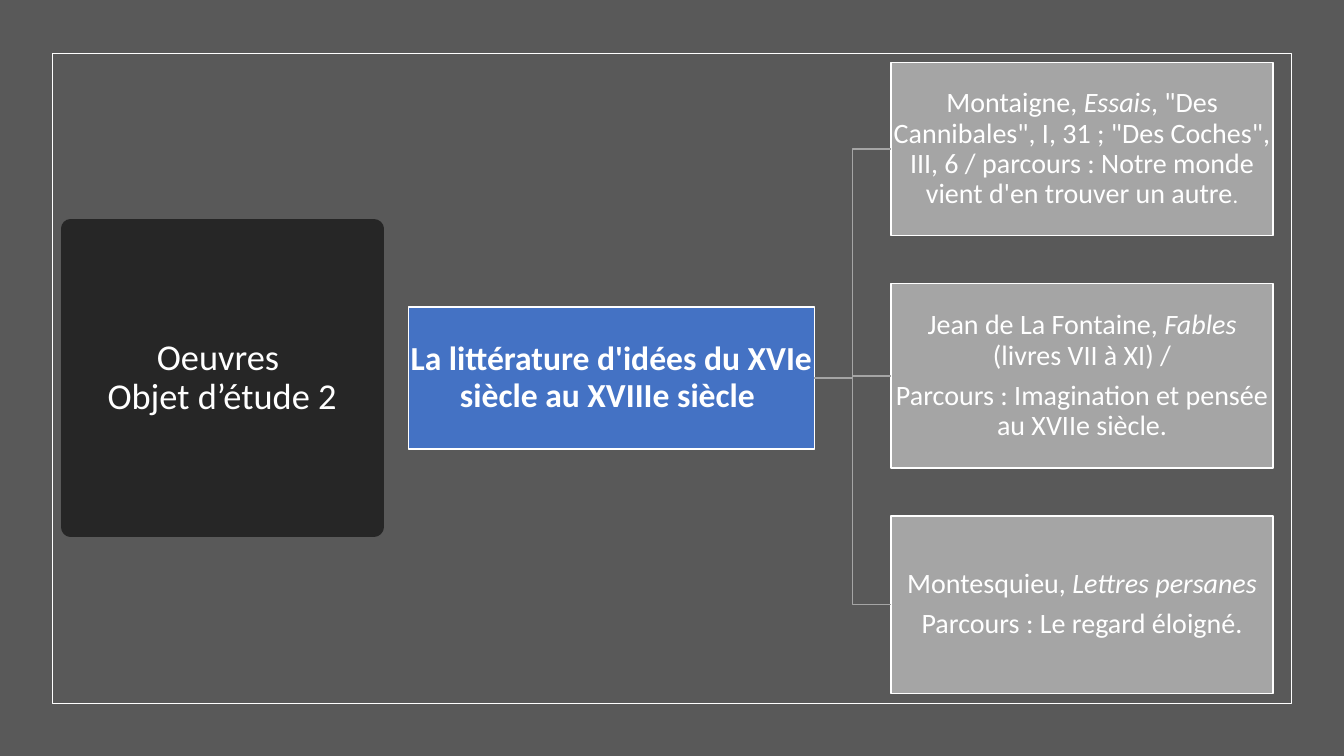
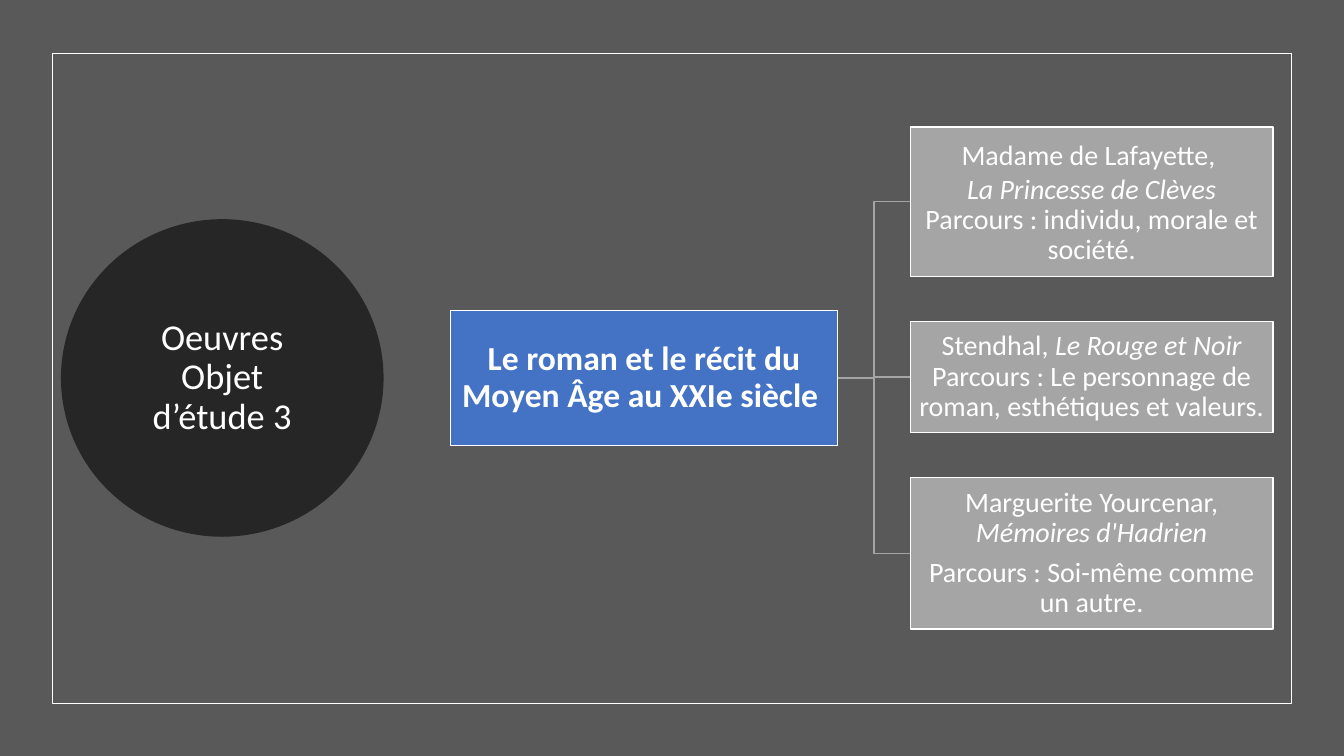
"""Two slides of set works: a title badge, a topic and a tree of three works."""
from dataclasses import dataclass

from lxml import etree
from pptx import Presentation
from pptx.dml.color import RGBColor
from pptx.enum.shapes import MSO_CONNECTOR, MSO_SHAPE
from pptx.enum.text import MSO_ANCHOR, MSO_AUTO_SIZE, PP_ALIGN
from pptx.oxml.ns import qn
from pptx.util import Pt

RECT, OVAL = MSO_SHAPE.RECTANGLE, MSO_SHAPE.OVAL
ELBOW = MSO_CONNECTOR.ELBOW
MIDDLE, CENTER = MSO_ANCHOR.MIDDLE, PP_ALIGN.CENTER
NO_FIT = MSO_AUTO_SIZE.NONE


@dataclass(frozen=True)
class Theme:
    font: str = "Calibri"
    ground: RGBColor = RGBColor(0x59, 0x59, 0x59)
    badge: RGBColor = RGBColor(0x26, 0x26, 0x26)
    topic: RGBColor = RGBColor(0x44, 0x72, 0xC4)
    work: RGBColor = RGBColor(0xA5, 0xA5, 0xA5)
    white: RGBColor = RGBColor(0xFF, 0xFF, 0xFF)
    title_size: float = 26
    topic_size: float = 24
    work_size: float = 20
    small_size: float = 16


T = Theme()
MID_Y = 270
BADGE_X, BADGE_W, BADGE_H = 50.4, 216.7, 213.1
WORK_RIGHT = 909.4
TIGHT, LOOSE = (0.9, 0.35), (1.0, 0)

SLIDES = [
    dict(
        title="Oeuvres \vObjet d’étude 2",
        badge=RECT, title_w=BADGE_W,
        topic="La littérature d'idées du XVIe siècle au XVIIIe siècle ",
        topic_box=(291.6, 290.2, 101.5),
        work_x=636.5, gap=34.2,
        works=[
            (123.8, [(TIGHT, [("Montaigne, ", ""), ("Essais", "italic"),
                              (", \"Des Cannibales\", I, 31 ; \"Des Coches\", III, 6 / parcours : "
                               "Notre monde vient d'en trouver un autre", ""),
                              (".", "small")])]),
            (131.8, [(TIGHT, [("Jean de La Fontaine, ", ""), ("Fables", "italic"),
                              (" (livres VII à XI) /", "")]),
                     (TIGHT, [("Parcours : Imagination et pensée au XVIIe siècle.", "")])]),
            (126.7, [(TIGHT, [("Montesquieu, ", ""), ("Lettres persanes", "italic")]),
                     (TIGHT, [("Parcours : Le regard éloigné.", "")])]),
        ],
    ),
    dict(
        title="Oeuvres Objet d’étude 3",
        badge=OVAL, title_w=153.2,
        topic="Le roman et le récit du Moyen Âge au XXIe siècle ",
        topic_box=(321.8, 276.5, 96.5),
        work_x=650.2, gap=32.4,
        works=[
            (106.6, [(LOOSE, [("Madame de Lafayette, ", "")]),
                     (LOOSE, [("La Princesse de Clèves", "italic")]),
                     (TIGHT, [("Parcours : individu, morale et société.", "")])]),
            (79.2, [(TIGHT, [("Stendhal, ", ""), ("Le Rouge et Noir ", "italic"),
                             ("Parcours : Le personnage de roman, esthétiques et valeurs.", "")])]),
            (108, [(TIGHT, [("Marguerite Yourcenar, ", ""), ("Mémoires d'Hadrien", "italic")]),
                   (TIGHT, [("Parcours : Soi-même comme un autre.", "")])]),
        ],
    ),
]


def add_box(s, kind, x, y, w, h, fill, line, line_w=1):
    sp = s.shapes.add_shape(kind, Pt(x), Pt(y), Pt(w), Pt(h))
    sp.shadow.inherit = False
    if fill is None:
        sp.fill.background()
    else:
        sp.fill.solid()
        sp.fill.fore_color.rgb = fill
    sp.line.color.rgb = line
    sp.line.width = Pt(line_w)
    return sp


def write(sp, paragraphs, size, inset=1, bold=False):
    tf = sp.text_frame
    tf.word_wrap = True
    tf.auto_size = NO_FIT
    tf.vertical_anchor = MIDDLE
    tf.margin_left = tf.margin_top = tf.margin_right = tf.margin_bottom = Pt(inset)
    for i, ((spacing, after), runs) in enumerate(paragraphs):
        p = tf.add_paragraph() if i else tf.paragraphs[0]
        p.alignment = CENTER
        p.line_spacing = spacing
        p.space_before = Pt(0)
        p.space_after = Pt(after * size)
        for text, style in runs:
            for j, part in enumerate(text.split("\v")):
                if j:
                    p.add_line_break()
                r = p.add_run()
                r.text = part
                r.font.name = T.font
                r.font.size = Pt(T.small_size if style == "small" else size)
                r.font.bold = bold
                r.font.italic = style == "italic"
                r.font.color.rgb = T.white


prs = Presentation()
prs.slide_width, prs.slide_height = Pt(960), Pt(540)
layout = prs.slide_layouts[5]
layout.background.fill.solid()
layout.background.fill.fore_color.rgb = T.ground

for n, data in enumerate(SLIDES):
    s = prs.slides.add_slide(layout)
    if n == 0:
        frame = add_box(s, RECT, 37.4, 38.2, 885, 464.4, None, T.white)
        layout.shapes._spTree.append(frame._element)

    badge = add_box(s, data["badge"], BADGE_X, MID_Y - BADGE_H / 2, BADGE_W, BADGE_H,
                    T.badge, T.badge, 13.75)
    etree.SubElement(badge.line._get_or_add_ln(), qn("a:round"))
    title = s.shapes.title
    title.left, title.top = Pt(BADGE_X + (BADGE_W - data["title_w"]) / 2), badge.top
    title.width, title.height = Pt(data["title_w"]), badge.height
    write(title, [((0.9, 0), [(data["title"], "")])], T.title_size, inset=7.2)
    s.shapes._spTree.append(title._element)

    x, w, h = data["topic_box"]
    topic = add_box(s, RECT, x, MID_Y - h / 2, w, h, T.topic, T.white)
    write(topic, [(TIGHT, [(data["topic"], "")])], T.topic_size, bold=True)

    works, gap, x = data["works"], data["gap"], data["work_x"]
    y = MID_Y - (sum(h for h, _ in works) + gap * (len(works) - 1)) / 2
    for h, paragraphs in works:
        work = add_box(s, RECT, x, y, WORK_RIGHT - x, h, T.work, T.white)
        write(work, paragraphs, T.work_size)
        link = s.shapes.add_connector(ELBOW, 0, 0, 0, 0)
        link.begin_connect(topic, 3)
        link.end_connect(work, 1)
        link.line.color.rgb = T.work
        link.line.width = Pt(1)
        etree.SubElement(link._element.spPr, qn("a:effectLst"))
        y += h + gap

prs.save("out.pptx")
